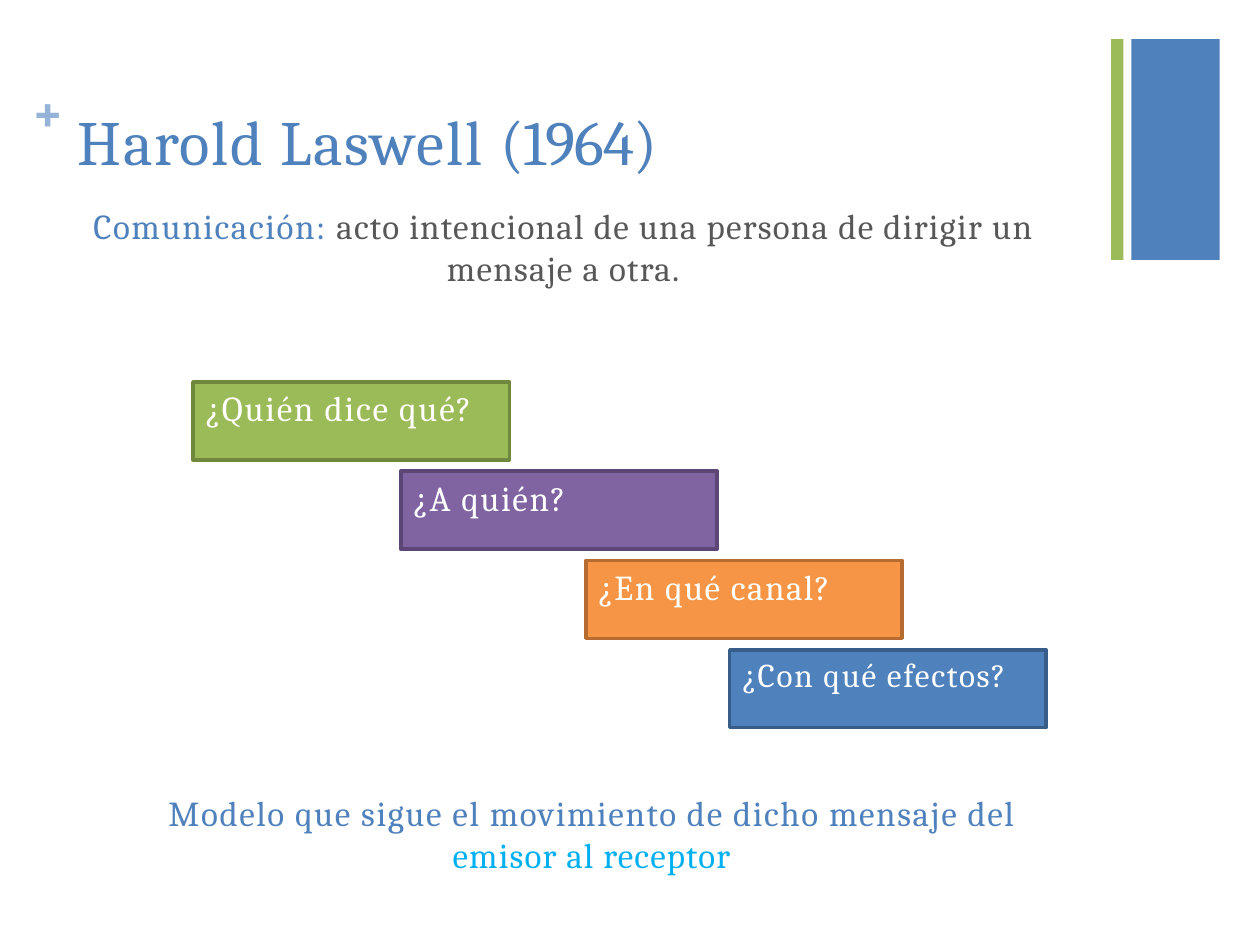
from dataclasses import dataclass

from pptx import Presentation
from pptx.dml.color import RGBColor
from pptx.enum.shapes import MSO_SHAPE
from pptx.enum.text import MSO_ANCHOR, MSO_AUTO_SIZE, PP_ALIGN
from pptx.util import Cm, Pt

RECT = MSO_SHAPE.RECTANGLE
TOP = MSO_ANCHOR.TOP
NO_FIT = MSO_AUTO_SIZE.NONE
LEFT, CENTER = PP_ALIGN.LEFT, PP_ALIGN.CENTER
TITLE_AND_CONTENT = 1


@dataclass(frozen=True)
class Theme:
    font: str = "Cambria"
    blue: str = "4F81BC"
    pale_blue: str = "94B3D6"
    cyan: str = "00B0F0"
    green: str = "9BBA58"
    purple: str = "8063A1"
    orange: str = "F79546"
    gray: str = "585858"
    white: str = "FFFFFF"
    plus_size: float = 54
    title_size: float = 36
    text_size: float = 20
    small_size: float = 19


@dataclass(frozen=True)
class Span:
    text: str
    color: str
    spacing: float  # letter spacing in points


@dataclass(frozen=True)
class Question:
    text: str
    left: float
    fill: str
    line: str
    spacing: float
    size: float


T = Theme()

QUESTIONS = [
    Question("¿Quién dice qué?", 3.89, T.green, "70883E", 1, T.text_size),
    Question("¿A quién?", 8.08, T.purple, "5C4676", 0.9, T.text_size),
    Question("¿En qué canal?", 11.81, T.orange, "B66C30", 0.85, T.text_size),
    Question("¿Con qué efectos?", 14.71, T.blue, "385D89", 1, T.small_size),
]
QUESTION_TOP, QUESTION_STEP = 7.7, 1.8

DEFINITION = [
    [Span("Comunicación: ", T.blue, 0.9),
     Span("acto intencional de una persona de dirigir un", T.gray, 0.7)],
    [Span("mensaje a otra.", T.gray, 0.7)],
]
MODEL = [
    [Span("Modelo que sigue el movimiento de dicho mensaje del", T.blue, 0.9)],
    [Span("emisor al receptor", T.cyan, 0.65)],
]


def place(s, left: float, top: float, width: float, height: float) -> None:
    s.left, s.top, s.width, s.height = Cm(left), Cm(top), Cm(width), Cm(height)


def add_span(p, span: Span):
    r = p.add_run()
    r.text = span.text
    r.font.color.rgb = RGBColor.from_string(span.color)
    r.font._element.set("spc", str(round(span.spacing * 100)))
    return r


def write(s, lines: list[list[Span]], size: float, align=LEFT,
          before: float = 1, inset_left: float = 0, inset_top: float = 0.03) -> None:
    """Fill a shape with one paragraph per line, without bullets."""
    tf = s.text_frame
    tf.word_wrap, tf.auto_size, tf.vertical_anchor = True, NO_FIT, TOP
    tf.margin_left, tf.margin_top = Cm(inset_left), Cm(inset_top)
    tf.margin_right = tf.margin_bottom = 0
    for i, spans in enumerate(lines):
        p = tf.add_paragraph() if i else tf.paragraphs[0]
        p.alignment = align
        p.space_before = Pt(0 if i else before)
        p.font.name, p.font.size = T.font, Pt(size)
        pPr = p._p.get_or_add_pPr()
        pPr.set("marL", "0")
        pPr.set("indent", "0")
        if s.is_placeholder:
            bullet_off = pPr.makeelement(
                "{http://schemas.openxmlformats.org/drawingml/2006/main}buNone", {})
            pPr.insert_element_before(bullet_off, "a:tabLst", "a:defRPr")
        for span in spans:
            add_span(p, span)


def add_box(slide, left: float, top: float, width: float, height: float,
            fill: str, line: str = ""):
    s = slide.shapes.add_shape(RECT, Cm(left), Cm(top), Cm(width), Cm(height))
    s.shadow.inherit = False
    s.fill.solid()
    s.fill.fore_color.rgb = RGBColor.from_string(fill)
    if line:
        s.line.color.rgb = RGBColor.from_string(line)
        s.line.width = Pt(2)
    else:
        s.line.fill.background()
    return s


def add_question(slide, q: Question, top: float) -> None:
    s = add_box(slide, q.left, top, 6.38, 1.57, q.fill, q.line)
    write(s, [[Span(q.text, T.white, q.spacing)]], q.size,
          before=3.1, inset_left=0.25, inset_top=0.1)


def main() -> None:
    prs = Presentation()
    prs.slide_width, prs.slide_height = Cm(25.4), Cm(19.05)
    slide = prs.slides.add_slide(prs.slide_layouts[TITLE_AND_CONTENT])

    # Corner bars
    add_box(slide, 22.81, 0.79, 1.78, 4.45, T.blue)
    add_box(slide, 22.4, 0.79, 0.25, 4.45, T.green)

    # Title with a raised plus sign
    title = slide.shapes.title
    place(title, 0.56, 1.4, 13.77, 1.6)
    write(title, [[Span("+ ", T.pale_blue, 0.4),
                   Span("Harold Laswell ", T.blue, 0.95),
                   Span("(1964)", T.blue, -0.45)]],
          T.title_size, inset_left=0.08)
    plus = title.text_frame.paragraphs[0].runs[0]
    plus.font.size, plus.font.bold = Pt(T.plus_size), True
    plus.font._element.set("baseline", "36000")

    # Definition
    body = slide.placeholders[1]
    place(body, 1.5, 4.09, 19.71, 1.75)
    write(body, DEFINITION, T.text_size, CENTER)

    # Staircase of questions
    for i, q in enumerate(QUESTIONS):
        add_question(slide, q, QUESTION_TOP + i * QUESTION_STEP)

    # Closing statement
    s = slide.shapes.add_textbox(Cm(3), Cm(15.93), Cm(17.86), Cm(1.75))
    write(s, MODEL, T.text_size, CENTER)

    prs.save("out.pptx")


if __name__ == "__main__":
    main()
